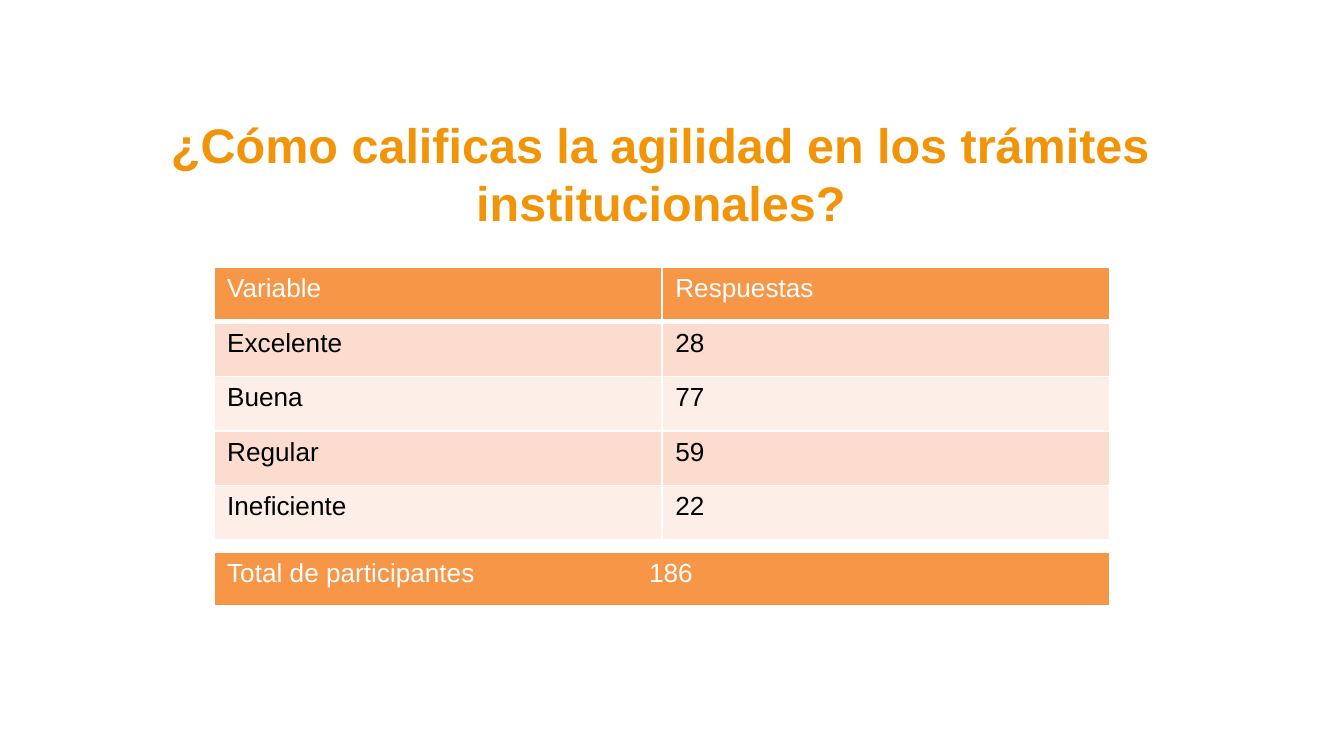
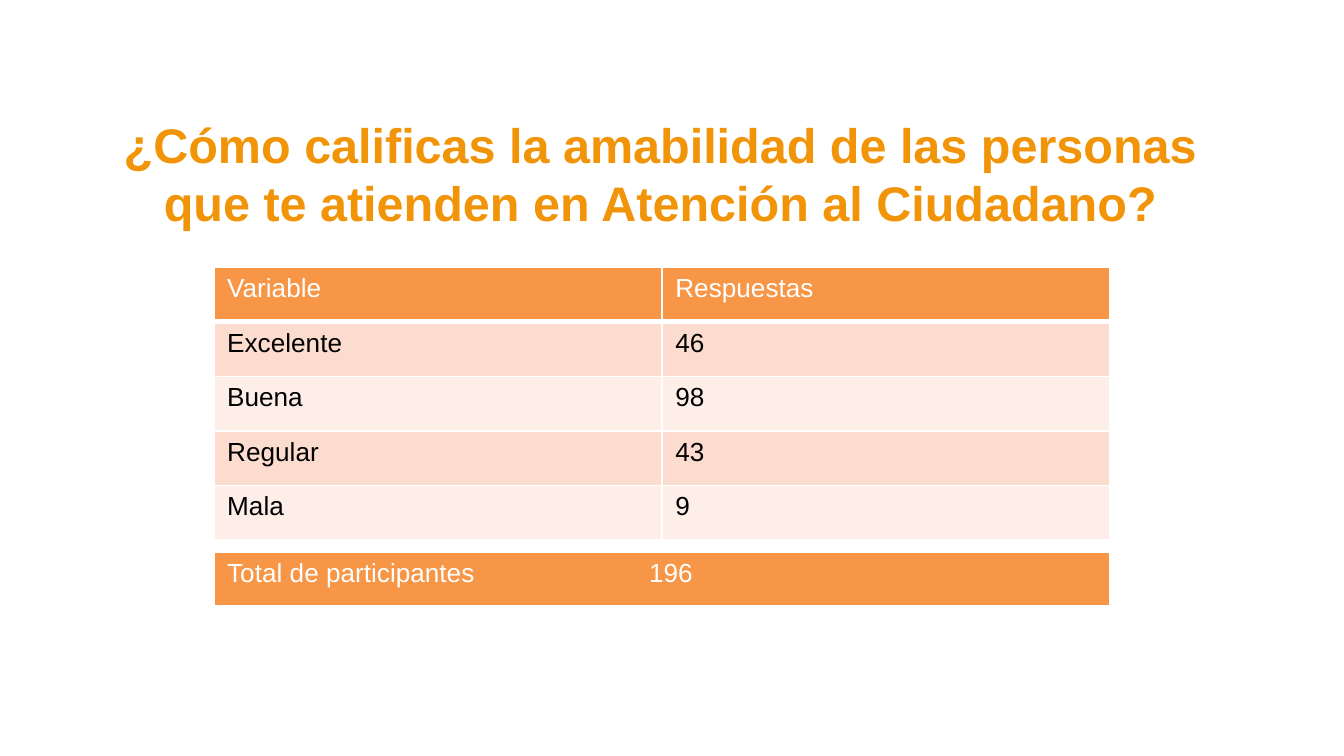
from pptx import Presentation
from pptx import util as u
from pptx.dml.color import RGBColor
from pptx.enum import text
from pptx.oxml import parse_xml
from pptx.oxml.ns import nsdecls

Pt = u.Pt

# Content
HEADER = ("Variable", "Respuestas")
TOTAL = "Total de participantes"
SURVEYS = [
    {
        "title": ["¿Cómo calificas la agilidad en los trámites", "institucionales?"],
        "answers": [("Excelente", 28), ("Buena", 77), ("Regular", 59), ("Ineficiente", 22)],
    },
    {
        "title": ["¿Cómo calificas la amabilidad de las personas "
                  "que te atienden en Atención al Ciudadano?"],
        "answers": [("Excelente", 46), ("Buena", 98), ("Regular", 43), ("Mala", 9)],
    },
]

# Shared style
WHITE, BLACK, ORANGE = "FFFFFF", "000000", "F79646"
BANDS = ("FCDCCE", "FDEEE8")
TITLE_FONT = {"name": "Arial", "size": Pt(26), "bold": True}
CELL_FONT = {"name": "Arial", "size": Pt(14), "bold": False}
TITLE_COLOR = "F19408"

# Layout, in points
TITLE_BOX = (34.5, 55.5, 639.5, 74)
LEFT, TOP, WIDTH, ROW_H = 114.5, 143.3, 480.2, 29.2
TOTAL_TOP = 296
TOTAL_TAB = 226
THIN, THICK = 1, 3


def rgb(value):
    return RGBColor.from_string(value)


def add_run(p, content, style, color):
    r = p.add_run()
    r.text = content
    for name, value in style.items():
        setattr(r.font, name, value)
    r.font.color.rgb = rgb(color)


def add_title(s, lines):
    tf = s.shapes.add_textbox(*map(Pt, TITLE_BOX)).text_frame
    tf.word_wrap = True
    tf.vertical_anchor = text.MSO_ANCHOR.MIDDLE
    for i, line in enumerate(lines):
        p = tf.add_paragraph() if i else tf.paragraphs[0]
        p.alignment = text.PP_ALIGN.CENTER
        add_run(p, line, TITLE_FONT, TITLE_COLOR)


def set_borders(cell, top, bottom):
    tc_pr = cell._tc.get_or_add_tcPr()
    for side, width in (("L", THIN), ("R", THIN), ("T", top), ("B", bottom)):
        tc_pr.append(parse_xml(
            f'<a:ln{side} {nsdecls("a")} w="{Pt(width)}"><a:solidFill>'
            f'<a:srgbClr val="{WHITE}"/></a:solidFill></a:ln{side}>'))


def add_table(s, top, rows):
    """Draw a table whose first row is an orange band; return it."""
    cols = len(rows[0])
    table = s.shapes.add_table(len(rows), cols, Pt(LEFT), Pt(top),
                               Pt(WIDTH), Pt(ROW_H * len(rows))).table
    for col in table.columns:
        col.width = Pt(WIDTH / cols)
    for i, row in enumerate(rows):
        table.rows[i].height = Pt(ROW_H)
        for j, value in enumerate(row):
            cell = table.cell(i, j)
            set_borders(cell, THICK if i == 1 else THIN, THIN if i else THICK)
            cell.fill.solid()
            cell.fill.fore_color.rgb = rgb(BANDS[(i - 1) % 2] if i else ORANGE)
            add_run(cell.text_frame.paragraphs[0], str(value), CELL_FONT,
                    BLACK if i else WHITE)
    return table


def add_total(s, answers):
    total = sum(count for _, count in answers)
    table = add_table(s, TOTAL_TOP, [(f"{TOTAL}\t{total}",)])
    p = table.cell(0, 0).text_frame.paragraphs[0]
    p._p.get_or_add_pPr().append(parse_xml(
        f'<a:tabLst {nsdecls("a")}><a:tab pos="{Pt(TOTAL_TAB)}" algn="l"/></a:tabLst>'))


def main():
    prs = Presentation()
    prs.slide_width, prs.slide_height = Pt(720), Pt(405)
    for survey in SURVEYS:
        s = prs.slides.add_slide(prs.slide_layouts[6])
        add_title(s, survey["title"])
        add_table(s, TOP, [HEADER, *survey["answers"]])
        add_total(s, survey["answers"])
    prs.save("out.pptx")


if __name__ == "__main__":
    main()
